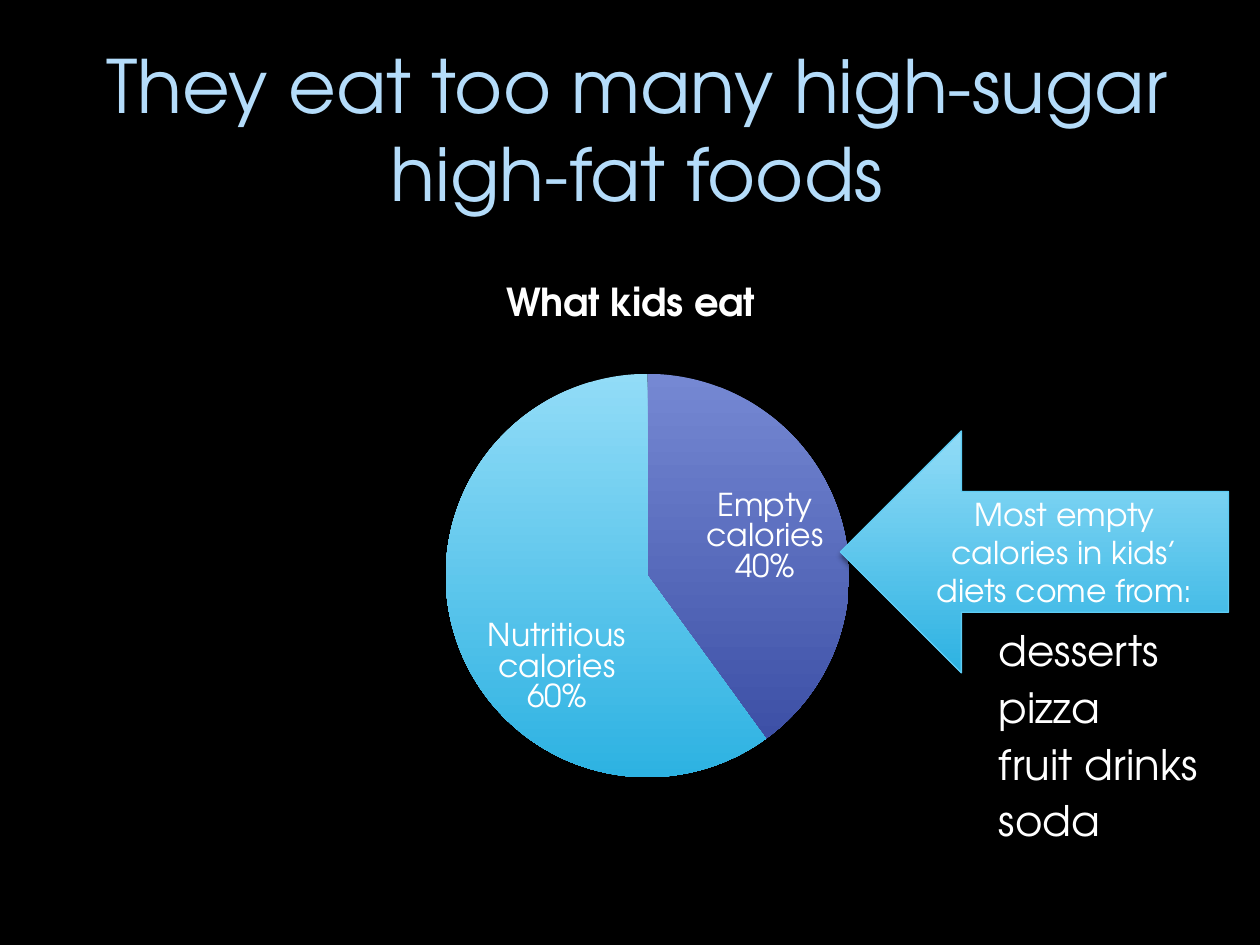
from lxml.etree import SubElement
from pptx import Presentation
from pptx.chart.data import CategoryChartData
from pptx.dml.color import RGBColor
from pptx.enum.chart import XL_CHART_TYPE, XL_LABEL_POSITION
from pptx.enum.shapes import MSO_SHAPE
from pptx.enum.text import MSO_ANCHOR, MSO_AUTO_SIZE, PP_ALIGN
from pptx.oxml import parse_xml
from pptx.oxml.ns import nsdecls, qn
from pptx.util import Inches, Pt

# Content
TITLE = "They eat too many high-sugar high-fat foods"
CHART_TITLE = "What kids eat"
SLICES = [  # category, value, gradient, label shift
    ("Empty calories 40%", 40, ("7588D3", "3D50A6"), (-0.01, -0.04)),
    ("Nutritious calories 60%", 60, ("92DCF7", "2DB2E2"), (0.03, 0.14)),
]
CALLOUT = "Most empty calories in kids’ diets come from:"
FOODS = [("desserts", 1.67), ("pizza", 1.17), ("fruit drinks", 1.92), ("soda", 1.17)]

THEME = {
    "font": "TeX Gyre Adventor",
    "bg": "000000", "title": "B4DCFA", "text": "FFFFFF", "line": "5ECCF3",
    "arrow": ("92DCF7", "2DB2E2"),
    "title_size": 42, "body_size": 18, "food_size": 24, "chart_title_size": 22,
}
FOOD_LEFT, FOOD_TOP, FOOD_STEP, FOOD_HEIGHT = 7.83, 4.91, 0.45, 0.5
PIE_AREA = {"x": 0.28, "y": 0.2, "w": 0.48, "h": 0.73}


def rgb(name):
    return RGBColor.from_string(THEME.get(name, name))


def style(font, size, color="text", bold=False):
    font.name = THEME["font"]
    font.size = Pt(THEME[size])
    font.bold = bold
    font.color.rgb = rgb(color)


def write(shape, text, size, color="text", align=PP_ALIGN.LEFT):
    tf = shape.text_frame
    tf.word_wrap = True
    tf.text = text
    p = tf.paragraphs[0]
    p.alignment = align
    style(p.runs[0].font, size, color)
    return tf


def shade(fill, colors):
    fill.gradient()
    fill.gradient_angle = 270
    for stop, color in zip(fill.gradient_stops, colors):
        stop.color.rgb = rgb(color)


def manual_layout(settings):
    layout = parse_xml(f"<c:layout {nsdecls('c')}><c:manualLayout/></c:layout>")
    for tag, value in settings.items():
        SubElement(layout[0], qn(f"c:{tag}")).set("val", str(value))
    return layout


prs = Presentation()
prs.slide_width, prs.slide_height = Inches(10), Inches(7.5)
s = prs.slides.add_slide(prs.slide_layouts[5])
s.background.fill.solid()
s.background.fill.fore_color.rgb = rgb("bg")

# Title
title = s.shapes.title
title.left, title.top, title.width, title.height = map(Inches, (0.53, 0.25, 9.05, 1.53))
tf = write(title, TITLE, "title_size", "title", PP_ALIGN.CENTER)
tf.vertical_anchor = MSO_ANCHOR.MIDDLE

# Pie chart
data = CategoryChartData(number_format="0")
data.categories = [row[0] for row in SLICES]
data.add_series(CHART_TITLE, [row[1] for row in SLICES])
chart = s.shapes.add_chart(XL_CHART_TYPE.PIE, Inches(1.67), Inches(2.06),
                           Inches(6.67), Inches(4.44), data).chart
style(chart.font, "body_size")
chart.has_legend = False
chart.has_title = True
chart.chart_title.include_in_layout = False
chart.chart_title.text_frame.text = CHART_TITLE
style(chart.chart_title.text_frame.paragraphs[0].runs[0].font, "chart_title_size", bold=True)

plot_area = chart._chartSpace.chart.plotArea
for old in plot_area.findall(qn("c:layout")):
    plot_area.remove(old)
plot_area.insert(0, manual_layout(
    {"layoutTarget": "inner", "xMode": "edge", "yMode": "edge", **PIE_AREA}))

# Slices, labelled with their category names
chart.plots[0].vary_by_categories = True
series = chart.plots[0].series[0]
labels = series.data_labels
labels.show_category_name, labels.show_value = True, False
labels.show_percentage = False
labels.position = XL_LABEL_POSITION.INSIDE_END
style(labels.font, "body_size")

for i, (_, _, colors, shift) in enumerate(SLICES):
    point = series.points[i]
    shade(point.format.fill, colors)
    point.format.line.fill.background()
    style(point.data_label.font, "body_size")
    point.data_label.position = XL_LABEL_POSITION.INSIDE_END
    d_lbl = labels._element.findall(qn("c:dLbl"))[i]
    for tag, shown in (("showCatName", "1"), ("showVal", "0"), ("showPercent", "0")):
        d_lbl.find(qn(f"c:{tag}")).set("val", shown)
    d_lbl.find(qn("c:idx")).addnext(manual_layout(dict(zip("xy", shift))))

# Callout arrow
arrow = s.shapes.add_shape(MSO_SHAPE.LEFT_ARROW, Inches(6.67), Inches(3.42),
                           Inches(3.08), Inches(1.92))
shade(arrow.fill, THEME["arrow"])
arrow.line.color.rgb = rgb("line")
arrow.line.width = Pt(0.75)
arrow.shadow.inherit = False
effects = arrow._element.spPr.find(qn("a:effectLst"))
effects.append(parse_xml(
    f'<a:outerShdw {nsdecls("a")} blurRad="{Pt(3)}" dist="{Pt(2)}" dir="5400000" '
    'rotWithShape="0"><a:srgbClr val="000000"><a:alpha val="45000"/></a:srgbClr>'
    "</a:outerShdw>"))
tf = write(arrow, CALLOUT, "body_size", align=PP_ALIGN.CENTER)
tf.vertical_anchor = MSO_ANCHOR.MIDDLE

# Foods
for i, (food, width) in enumerate(FOODS):
    box = s.shapes.add_textbox(Inches(FOOD_LEFT), Inches(FOOD_TOP + i * FOOD_STEP),
                               Inches(width), Inches(FOOD_HEIGHT))
    write(box, food, "food_size").auto_size = MSO_AUTO_SIZE.SHAPE_TO_FIT_TEXT

prs.save("out.pptx")
